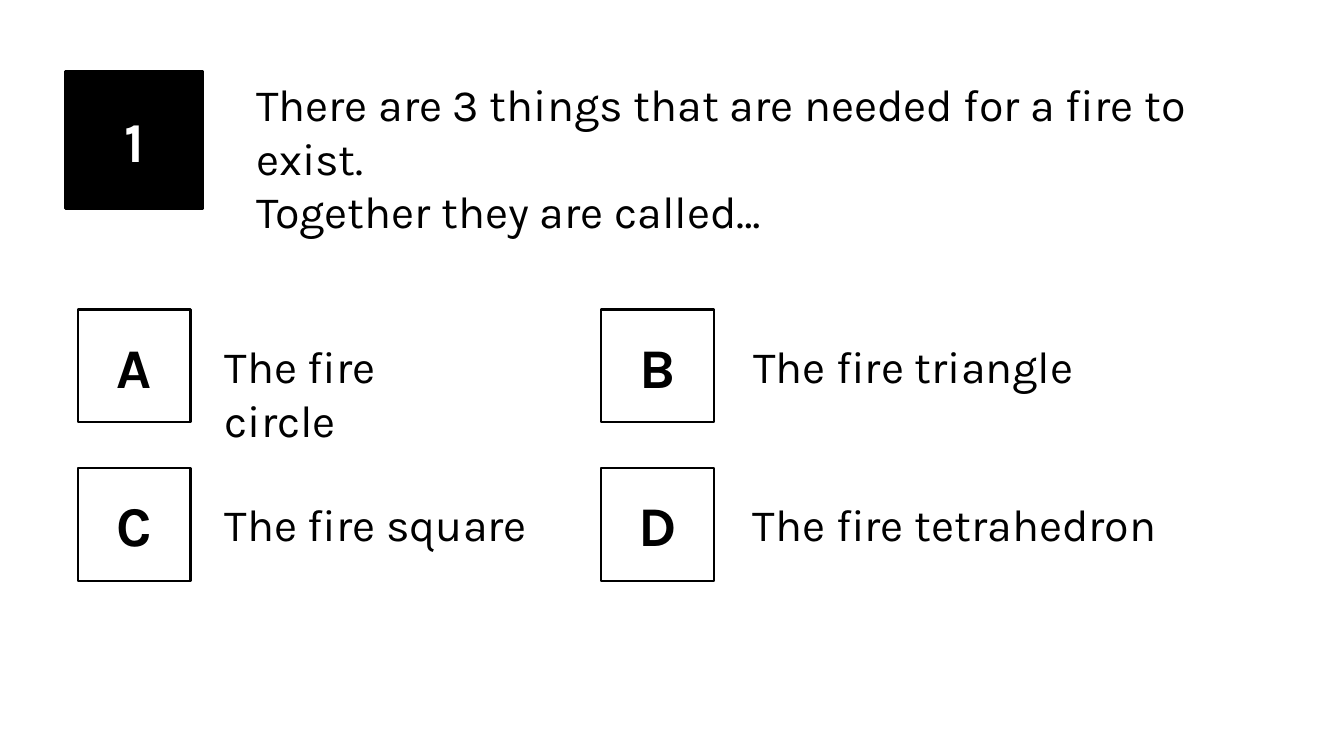
"""Build a quiz slide with one question and four lettered answers."""
from dataclasses import dataclass

from pptx import Presentation
from pptx import util as u
from pptx.dml.color import RGBColor
from pptx.enum import shapes, text

BLACK = RGBColor(0, 0, 0)
WHITE = RGBColor(255, 255, 255)
FONT = "Karla"
TOP, STEP = 3.07, 1.57
BOX_LEFT = (0.77, 5.96)
TEXT_LEFT = (2.13, 7.37)


@dataclass
class Answer:
    letter: str
    words: str
    width: float


ANSWERS = [
    Answer("A", "The fire circle", 2.86),
    Answer("B", "The fire triangle", 3.52),
    Answer("C", "The fire square", 3.36),
    Answer("D", "The fire tetrahedron", 4.93),
]


def write(shape, words: str, size: int = 32, color: RGBColor = BLACK,
          bold: bool = False, align=text.PP_ALIGN.LEFT,
          anchor=text.MSO_ANCHOR.TOP,
          fit=text.MSO_AUTO_SIZE.SHAPE_TO_FIT_TEXT) -> None:
    frame = shape.text_frame
    frame.word_wrap = True
    frame.auto_size = fit
    frame.vertical_anchor = anchor
    frame.text = words
    for para in frame.paragraphs:
        para.alignment = align
        font = para.runs[0].font
        font.name, font.size, font.bold = FONT, u.Pt(size), bold
        font.color.rgb = color


def badge(slide, label: str, left: float, top: float, side: float,
          fill: RGBColor, color: RGBColor) -> None:
    box = slide.shapes.add_shape(
        shapes.MSO_SHAPE.RECTANGLE, u.Inches(left), u.Inches(top),
        u.Inches(side), u.Inches(side))
    box.shadow.inherit = False
    box.fill.solid()
    box.fill.fore_color.rgb = fill
    box.line.color.rgb = BLACK
    box.line.width = u.Pt(1.5)
    write(box, label, size=40, color=color, bold=True,
          align=text.PP_ALIGN.CENTER, anchor=text.MSO_ANCHOR.MIDDLE,
          fit=text.MSO_AUTO_SIZE.NONE)


def reply(slide, answer: Answer, row: int, col: int) -> None:
    top = TOP + row * STEP
    box = slide.shapes.add_textbox(
        u.Inches(TEXT_LEFT[col]), u.Inches(top + 0.24),
        u.Inches(answer.width), u.Inches(0.64))
    write(box, answer.words)
    badge(slide, answer.letter, BOX_LEFT[col], top, 1.12, WHITE, BLACK)


def main() -> None:
    deck = Presentation()
    deck.slide_width, deck.slide_height = u.Inches(13.33), u.Inches(7.5)
    slide = deck.slides.add_slide(deck.slide_layouts[5])
    title = slide.shapes.title
    title.left, title.top = u.Inches(2.44), u.Inches(0.71)
    title.width, title.height = u.Inches(10.24), u.Inches(1.18)
    write(title, "There are 3 things that are needed for a fire to exist.\n"
                 "Together they are called…")
    badge(slide, "1", 0.65, 0.71, 1.36, BLACK, WHITE)
    for index, answer in enumerate(ANSWERS):
        reply(slide, answer, *divmod(index, 2))
    deck.save("out.pptx")


if __name__ == "__main__":
    main()
